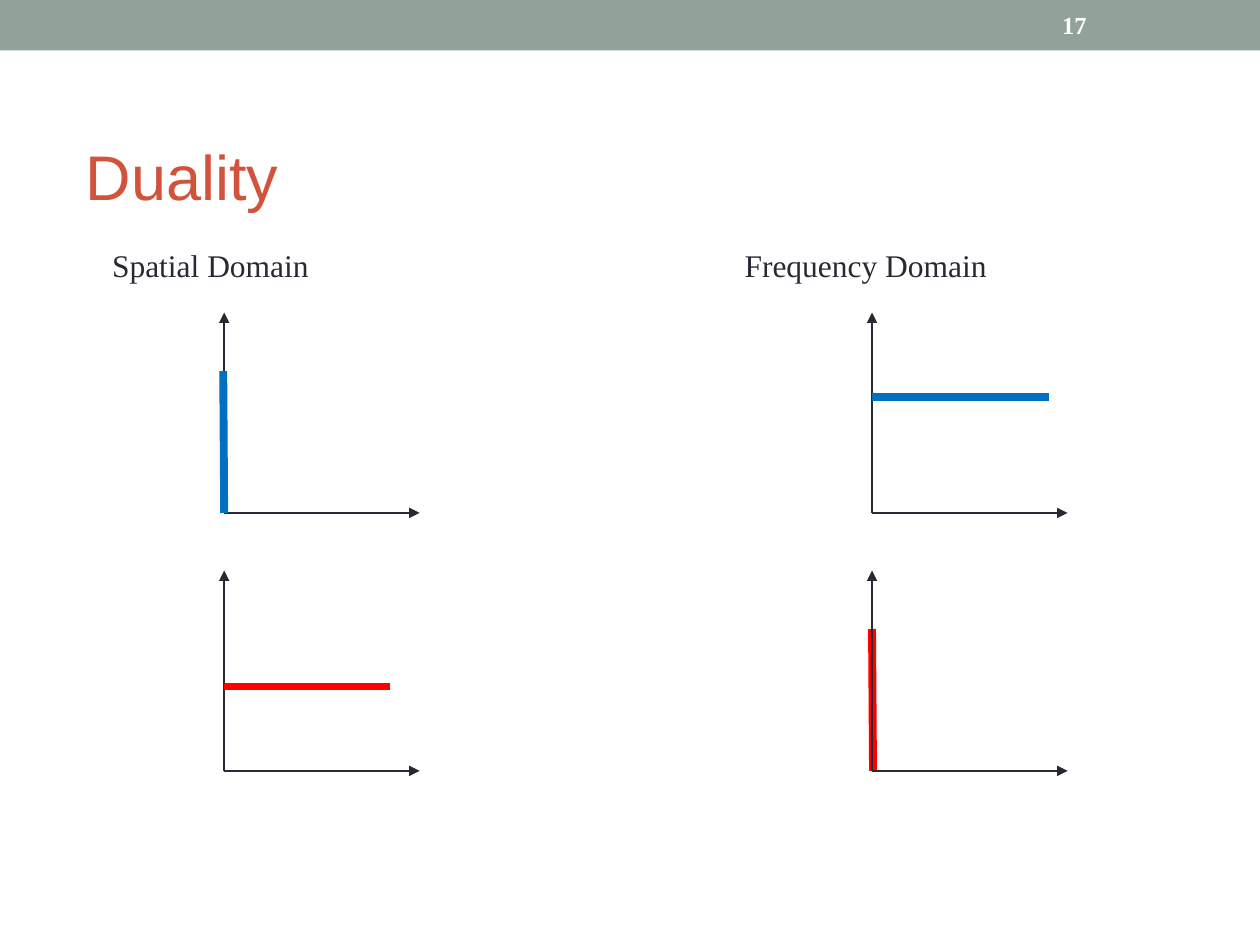
from lxml import etree
from pptx import Presentation
from pptx.dml.color import RGBColor
from pptx.enum.shapes import MSO_CONNECTOR, MSO_SHAPE
from pptx.enum.text import MSO_ANCHOR, PP_ALIGN
from pptx.oxml.ns import qn
from pptx.util import Cm, Pt

STRAIGHT = MSO_CONNECTOR.STRAIGHT
RECTANGLE = MSO_SHAPE.RECTANGLE
TOP, MIDDLE = MSO_ANCHOR.TOP, MSO_ANCHOR.MIDDLE
LEFT = PP_ALIGN.LEFT

SAGE = RGBColor(0x93, 0xA2, 0x99)
RUST = RGBColor(0xD2, 0x53, 0x3C)
INK = RGBColor(0x29, 0x29, 0x34)
BLUE = RGBColor(0x00, 0x70, 0xC0)
RED = RGBColor(0xFF, 0x00, 0x00)
WHITE = RGBColor(0xFF, 0xFF, 0xFF)

SPATIAL_X, FREQUENCY_X = 4.52, 17.58
UPPER_Y, LOWER_Y = 10.34, 15.54
AXIS_WIDTH, AXIS_HEIGHT = 3.94, 4.04
IMPULSE = (-0.02, 2.86)


def write_text(frame, text, font="Times New Roman", size=18, color=INK,
               bold=False, anchor=TOP, wrap=True):
    frame.word_wrap = wrap
    frame.vertical_anchor = anchor
    para = frame.paragraphs[0]
    para.alignment = LEFT
    span = para.add_run()
    span.text = text
    span.font.name = font
    span.font.size = Pt(size)
    span.font.bold = bold
    span.font.color.rgb = color


class DualityPage:
    def __init__(self, deck):
        self.page = deck.slides.add_slide(deck.slide_layouts[5])
        self.shapes = self.page.shapes

    def band(self, width, height, color):
        band = self.shapes.add_shape(RECTANGLE, 0, 0, Cm(width), Cm(height))
        band.shadow.inherit = False
        band.fill.solid()
        band.fill.fore_color.rgb = color
        band.line.fill.background()

    def title(self, text, left, top, width, height):
        title = self.shapes.title
        title.left, title.top = Cm(left), Cm(top)
        title.width, title.height = Cm(width), Cm(height)
        write_text(title.text_frame, text, font="Arial", size=36,
                   color=RUST, anchor=MIDDLE)

    def label(self, text, left, top, width, height, **style):
        box = self.shapes.add_textbox(Cm(left), Cm(top), Cm(width), Cm(height))
        write_text(box.text_frame, text, **style)

    def line(self, start, end, color=INK, weight=1.5, arrow=False):
        line = self.shapes.add_connector(
            STRAIGHT, *(Cm(value) for value in (*start, *end)))
        line.line.color.rgb = color
        line.line.width = Pt(weight)
        if arrow:
            etree.SubElement(line.line._get_or_add_ln(), qn("a:tailEnd"),
                             type="triangle")
        etree.SubElement(line._element.spPr, qn("a:effectLst"))

    def axes(self, x, y):
        self.line((x, y), (x + AXIS_WIDTH, y), arrow=True)
        self.line((x, y), (x, y - AXIS_HEIGHT), arrow=True)

    def impulse(self, x, y, color):
        shift, height = IMPULSE
        self.line((x, y), (x + shift, y - height), color, weight=4.5)

    def constant(self, x, y, length, level, color):
        self.line((x, y - level), (x + length, y - level), color, weight=4.5)


def main():
    deck = Presentation()
    deck.slide_width, deck.slide_height = Cm(25.4), Cm(19.05)
    page = DualityPage(deck)

    page.band(25.4, 1.02, SAGE)
    page.title("Duality", 1.47, 2.69, 21.95, 1.68)
    page.label("17", 21.16, 0.05, 2.97, 0.91, size=14, color=WHITE,
               bold=True, anchor=MIDDLE)
    page.label("Spatial Domain", 2.01, 4.83, 4.52, 1.02, wrap=False)
    page.label("Frequency Domain", 14.76, 4.83, 5.46, 1.02, wrap=False)

    page.axes(SPATIAL_X, UPPER_Y)
    page.impulse(SPATIAL_X, UPPER_Y, BLUE)
    page.axes(FREQUENCY_X, UPPER_Y)
    page.constant(FREQUENCY_X, UPPER_Y, 3.56, 2.34, BLUE)

    page.impulse(FREQUENCY_X + 0.02, LOWER_Y, RED)
    page.axes(FREQUENCY_X, LOWER_Y)
    page.axes(SPATIAL_X, LOWER_Y)
    page.constant(SPATIAL_X, LOWER_Y, 3.35, 1.7, RED)

    deck.save("out.pptx")


if __name__ == "__main__":
    main()
